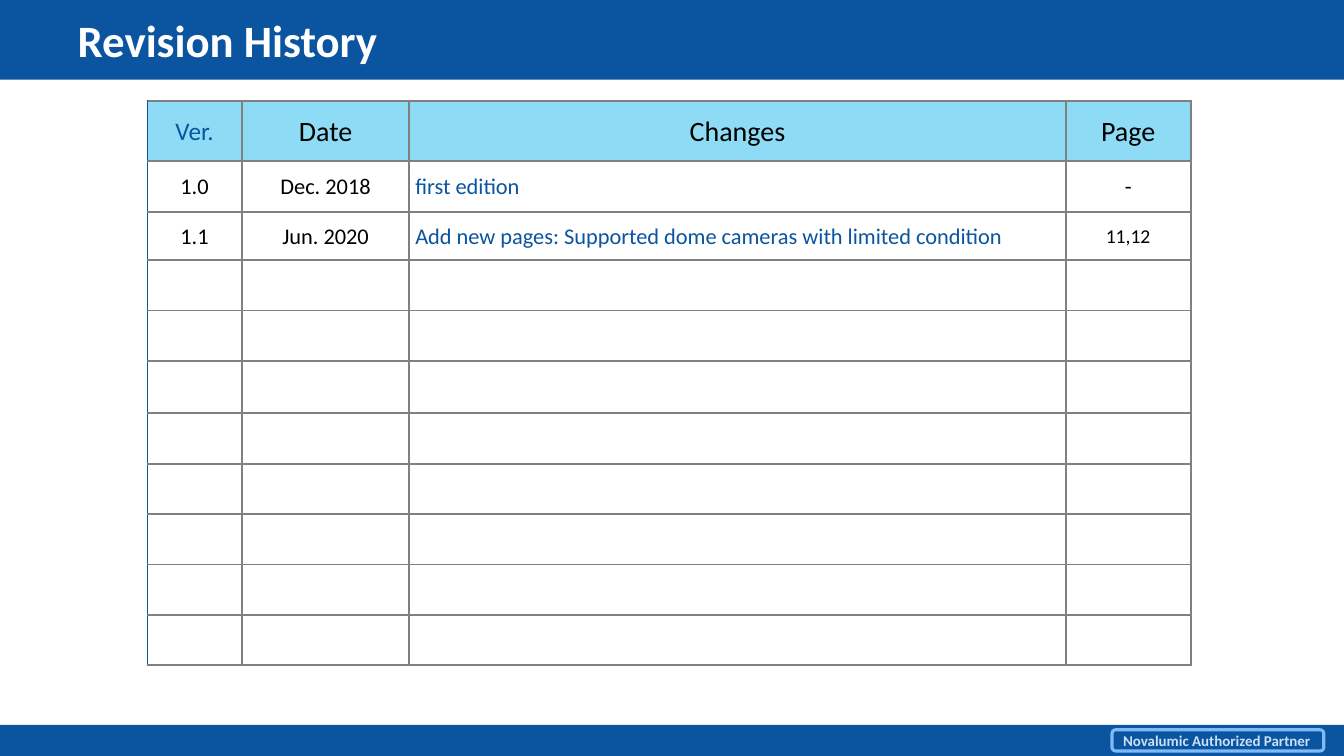
from lxml.etree import SubElement
from pptx import Presentation
from pptx.dml.color import RGBColor
from pptx.enum.shapes import MSO_SHAPE
from pptx.enum.text import MSO_ANCHOR, PP_ALIGN
from pptx.oxml.ns import qn
from pptx.util import Inches, Pt

COLORS = {
    "blue": "0A54A0",
    "header": "8EDBF5",
    "grid": "808080",
    "badge_line": "7FBAF7",
    "badge_text": "C9E1F8",
    "white": "FFFFFF",
    "black": "000000",
}


def rgb(name):
    return RGBColor.from_string(COLORS[name])


def write(tf, text, size=16, color="black", bold=False, align=PP_ALIGN.LEFT, font="Calibri"):
    p = tf.paragraphs[0]
    p.alignment = align
    r = p.add_run()
    r.text = text
    r.font.name = font
    r.font.size = Pt(size)
    r.font.bold = bold
    r.font.color.rgb = rgb(color)


class SlideBuilder:
    def __init__(self, prs):
        self.s = prs.slides.add_slide(prs.slide_layouts[6])

    def shape(self, kind, box, fill=None, line=None):
        sp = self.s.shapes.add_shape(kind, *map(Inches, box))
        sp.shadow.inherit = False
        if fill:
            sp.fill.solid()
            sp.fill.fore_color.rgb = rgb(fill)
        else:
            sp.fill.background()
        if line:
            sp.line.color.rgb = rgb(line)
            sp.line.width = Pt(2.25)
        else:
            sp.line.fill.background()
        return sp

    def badge(self, box, text):
        sp = self.shape(MSO_SHAPE.ROUNDED_RECTANGLE, box, line="badge_line")
        tf = sp.text_frame
        tf.word_wrap = False
        tf.vertical_anchor = MSO_ANCHOR.MIDDLE
        write(tf, text, size=10.7, color="badge_text", bold=True)

    def title(self, box, text):
        tf = self.s.shapes.add_textbox(*map(Inches, box)).text_frame
        tf.word_wrap = True
        tf.vertical_anchor = MSO_ANCHOR.MIDDLE
        tf.margin_left = tf.margin_right = Inches(0.13)
        tf.margin_top = tf.margin_bottom = Inches(0.07)
        write(tf, text, size=32, color="white", bold=True)

    def border(self, cell, side, color, width):
        tcPr = cell._tc.get_or_add_tcPr()
        ln = SubElement(tcPr, qn(f"a:ln{side}"), w=str(Pt(width)))
        fill = SubElement(ln, qn("a:solidFill"))
        SubElement(fill, qn("a:srgbClr"), val=COLORS[color])

    def table(self, left, top, widths, heights, rows):
        frame = self.s.shapes.add_table(
            len(heights), len(widths), Inches(left), Inches(top),
            Inches(sum(widths)), Inches(sum(heights)))
        tbl = frame.table
        tbl.first_row = tbl.horz_banding = False
        for col, width in zip(tbl.columns, widths):
            col.width = Inches(width)
        for i, height in enumerate(heights):
            tbl.rows[i].height = Inches(height)
            for j in range(len(widths)):
                cell = tbl.cell(i, j)
                for side in "LRTB":
                    outer = side == "L" and j == 0
                    self.border(cell, side, "blue" if outer else "grid", 1 if outer else 1.5)
                if i == 0:
                    cell.fill.solid()
                    cell.fill.fore_color.rgb = rgb("header")
                else:
                    cell.fill.background()
                if i < len(rows):
                    text, style = rows[i][j]
                    self.fill_cell(cell, text, style)

    def fill_cell(self, cell, text, style):
        centered = style.get("align") == PP_ALIGN.CENTER
        cell.vertical_anchor = MSO_ANCHOR.MIDDLE
        cell.margin_left = Inches(0.01 if centered else 0.06)
        cell.margin_right = cell.margin_top = Inches(0.01)
        cell.margin_bottom = 0
        write(cell.text_frame, text, **style)


def main():
    prs = Presentation()
    prs.slide_width, prs.slide_height = Inches(13.33), Inches(7.5)
    slide = SlideBuilder(prs)

    # Header and footer bands
    slide.shape(MSO_SHAPE.RECTANGLE, (0, 7.19, 13.33, 0.31), fill="blue")
    slide.shape(MSO_SHAPE.RECTANGLE, (0, 0, 13.33, 0.79), fill="blue")
    slide.badge((11.03, 7.24, 2.1, 0.21), "Novalumic Authorized Partner")
    slide.title((0.64, 0.02, 11.44, 0.74), "Revision History")

    # Revision table
    center = {"align": PP_ALIGN.CENTER}
    head = {**center, "size": 20}
    change = {"color": "blue"}
    rows = [
        [("Ver.", {**center, "size": 18, "color": "blue"}),
         ("Date", head), ("Changes", head), ("Page", head)],
        [("1.0", center), ("Dec. 2018", center), ("first edition", change), ("-", center)],
        [("1.1", center), ("Jun. 2020", center),
         ("Add new pages: Supported dome cameras with limited condition", change),
         ("11,12", {**center, "size": 14})],
    ]
    heights = [0.6, 0.5, 0.48, 0.5, 0.5, 0.52] + [0.5] * 5
    slide.table(1.46, 1, [0.94, 1.66, 6.51, 1.24], heights, rows)

    prs.save("out.pptx")


if __name__ == "__main__":
    main()
